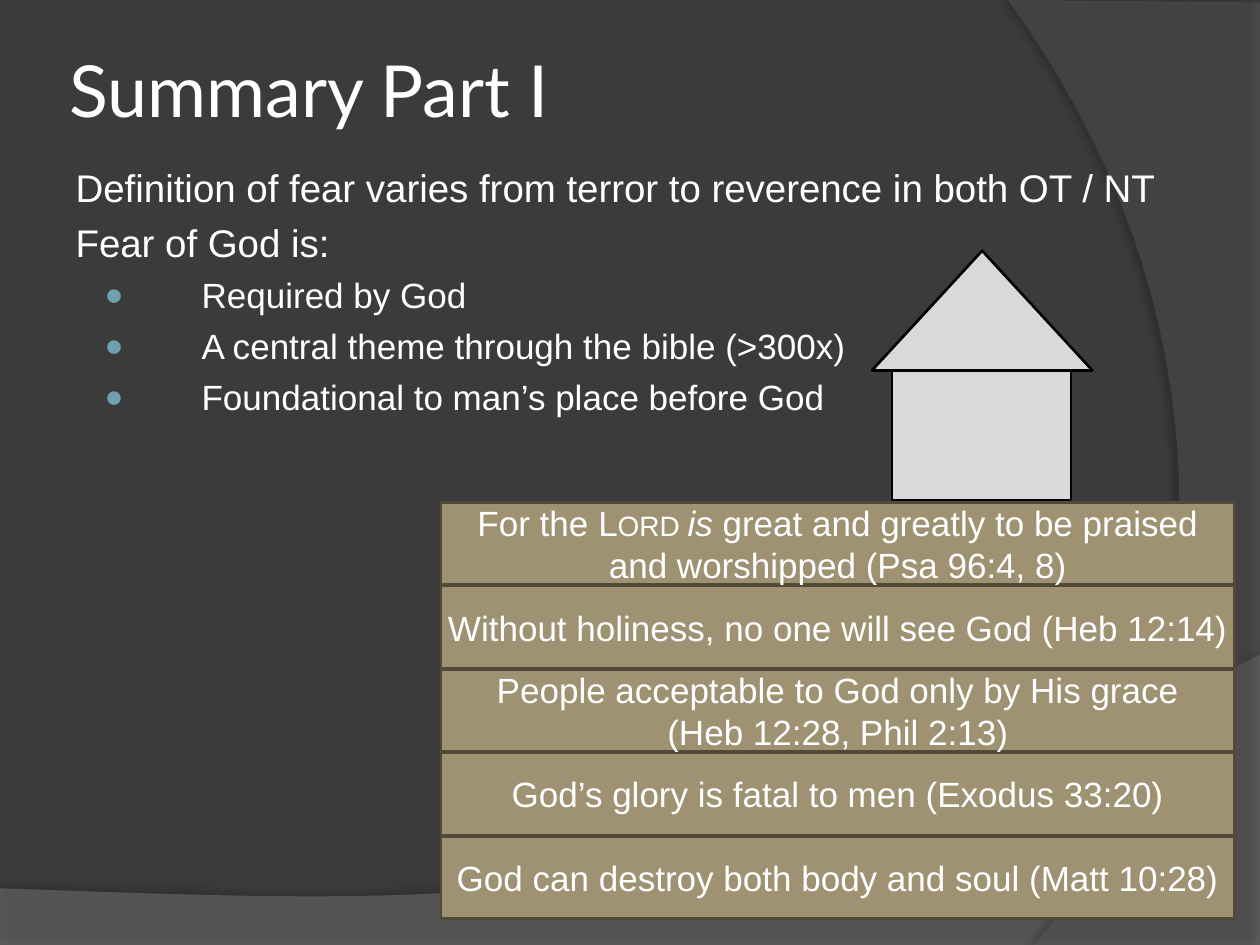
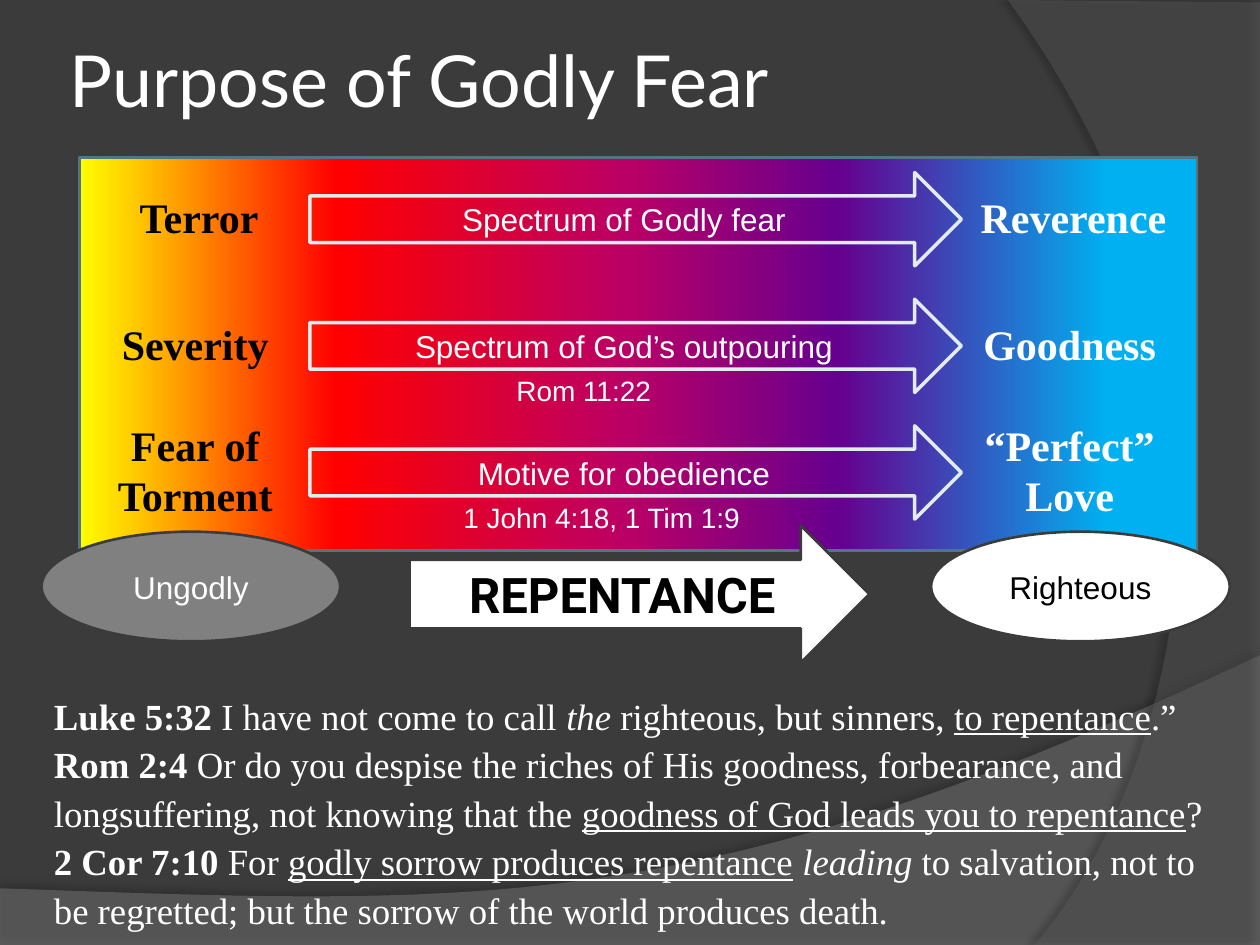
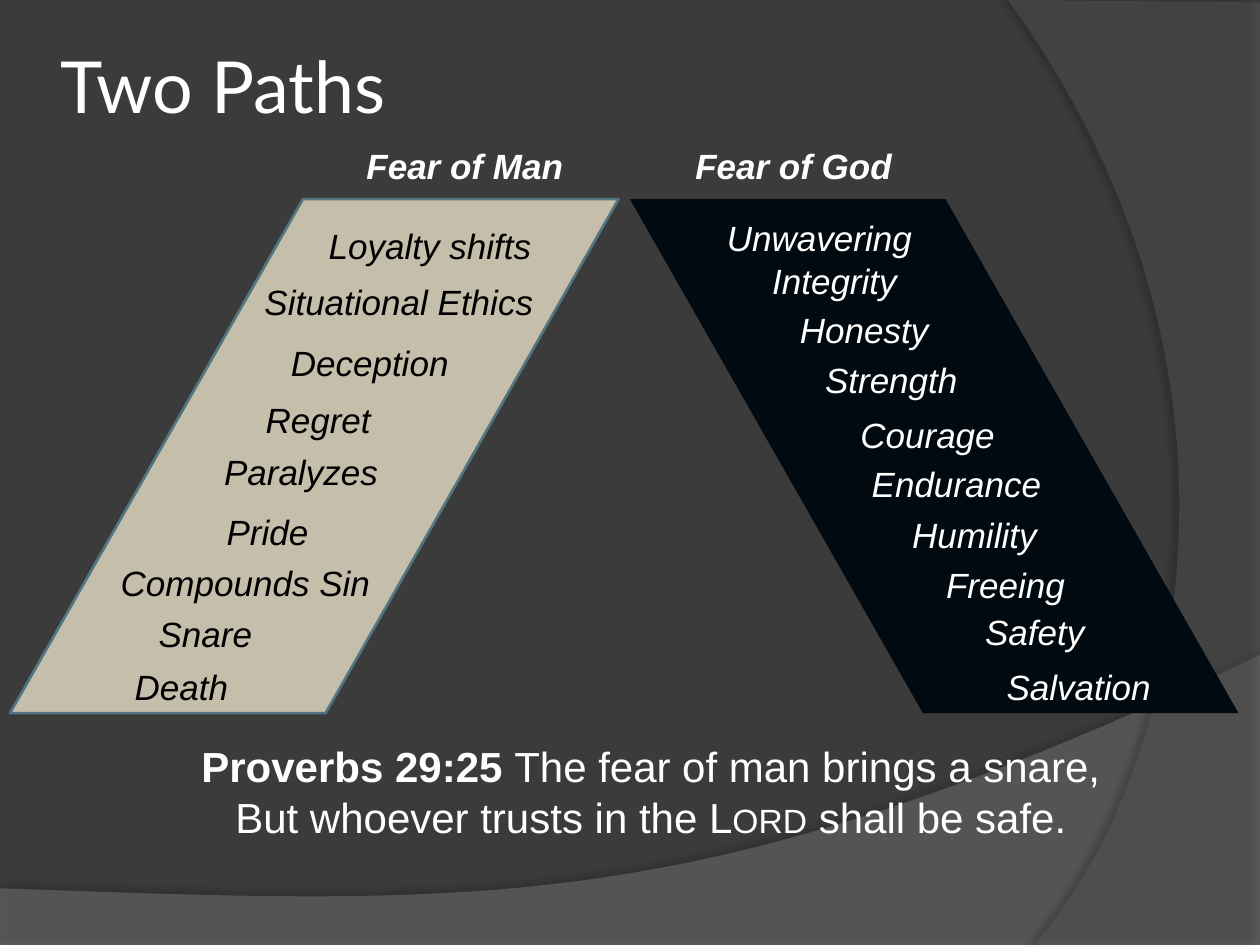
from dataclasses import dataclass
from typing import NamedTuple, Sequence

import lxml.etree
import pptx
import pptx.dml.color
import pptx.dml.fill
import pptx.enum.shapes
import pptx.enum.text
import pptx.oxml.ns
import pptx.presentation
import pptx.shapes.autoshape
import pptx.slide
import pptx.text.text
import pptx.util

CELL = pptx.util.Inches(0.1)  # the slide is a grid of 100 columns and 75 rows
COLUMNS, ROWS = 100, 75

BACKGROUND, WHITE, BLACK = "3B3B3B", "FFFFFF", "000000"
STONE, STONE_EDGE = "9E9273", "514A38"
HOUSE = "D9D9D9"
TEAL_EDGE, BULLET = "517682", "6EA0B0"
ARROW_EDGE = "E2ECEF"
UNGODLY = "808080"
MAN_PATH, GOD_PATH = "C5BEAB", "000A10"
SPECTRUM = ((0, "FFFF00"), (23, "FF0000"), (49, "BA0066"), (68, "66008F"), (92, "00B0F0"))

SHAPE = pptx.enum.shapes.MSO_SHAPE
LEFT, CENTER = pptx.enum.text.PP_ALIGN.LEFT, pptx.enum.text.PP_ALIGN.CENTER
TOP, MIDDLE = pptx.enum.text.MSO_ANCHOR.TOP, pptx.enum.text.MSO_ANCHOR.MIDDLE


class Box(NamedTuple):
    """A place on the grid, in columns and rows."""
    left: float
    top: float
    width: float
    height: float

    def emu(self) -> list[int]:
        return [cells(length) for length in self]


class Span(NamedTuple):
    text: str
    bold: bool = False
    italic: bool = False
    underline: bool = False
    small_caps: bool = False


@dataclass(frozen=True)
class Style:
    size: float
    color: str = WHITE
    font: str = "Arial"
    bold: bool = False
    italic: bool = False
    align: pptx.enum.text.PP_ALIGN = CENTER
    anchor: pptx.enum.text.MSO_ANCHOR = MIDDLE
    line_spacing: float = 1.0
    inset: tuple[float, float] = (1, 0.5)
    wrap: bool = True


class Band(NamedTuple):
    """A curved background area: straight corners, then one Bézier curve."""
    corners: Sequence[tuple[float, float]]
    curve: Sequence[tuple[float, float]]
    color: str
    opacity: int
    shadow_opacity: int
    shadow_distance: float
    shadow_angle: int


class SpectrumRow(NamedTuple):
    severe: str
    mild: str
    meaning: str
    label_left: float
    reference: str = ""
    reference_left: float = 0
    reference_width: float = 0


class Step(NamedTuple):
    text: str
    left: float
    top: float
    width: float


Paragraph = str | Sequence[Span]

BANDS = (
    Band(((0, 75), (100, 75), (100, 52)), ((55.9, 72.9), (39.1, 71.9), (0, 70.5)),
         "7F7F7F", 45, 35, 3.5, 270),
    Band(((100, 0.2), (100, 75), (82.1, 75)), ((93.5, 61.9), (101.8, 30), (80, 0)),
         "5E5E5E", 40, 45, 4, 180),
)

TITLE = Style(41, font="Lato", align=LEFT, inset=(0.5, 0.5))
BLOCK = Style(20, inset=(0.2, 0))
CAPTION = Style(18)
REFERENCE = Style(16, align=LEFT, anchor=TOP, wrap=False)
SCRIPTURE = Style(21, font="Times New Roman", align=LEFT, anchor=TOP, line_spacing=1.1)

FOUNDATION: Sequence[Sequence[Paragraph]] = (
    ((Span("For the "), Span("Lord ", small_caps=True), Span("is", italic=True),
      Span(" great and greatly to be praised and worshipped (Psa 96:4, 8)")),),
    ("Without holiness, no one will see God (Heb 12:14)",),
    ("People acceptable to God only by His grace", "(Heb 12:28, Phil 2:13)"),
    ("God’s glory is fatal to men (Exodus 33:20)",),
    ("God can destroy both body and soul (Matt 10:28)",),
)

SPECTRUM_ROWS = (
    SpectrumRow("Terror", "Reverence", "Spectrum of Godly fear", 4.5),
    SpectrumRow("Severity", "Goodness", "Spectrum of God’s outpouring", 4.2,
                "Rom 11:22", 40, 12.8),
    SpectrumRow("Fear of Torment", "“Perfect” Love", "Motive for obedience", 4.2,
                "1 John 4:18, 1 Tim 1:9", 35.8, 24.2),
)

VERSES = (
    (Span("Luke 5:32 ", bold=True), Span("I have not come to call "), Span("the", italic=True),
     Span(" righteous, but sinners, "), Span("to repentance", underline=True), Span(".”")),
    (Span("Rom 2:4 ", bold=True),
     Span("Or do you despise the riches of His goodness, forbearance, and longsuffering, "
          "not knowing that the "),
     Span("goodness of God leads you to repentance", underline=True), Span("?")),
    (Span("2 Cor 7:10 ", bold=True), Span("For "),
     Span("godly sorrow produces repentance", underline=True), Span(" "),
     Span("leading", italic=True),
     Span(" to salvation, not to be regretted; but the sorrow of the world produces death.")),
)

FEAR_OF_MAN = (
    Step("Loyalty shifts", 25.1, 17.3, 18.2), Step("Situational Ethics", 20, 21.8, 23.5),
    Step("Deception", 22.1, 26.6, 14.7), Step("Regret", 20.1, 31.1, 10.4),
    Step("Paralyzes", 16.8, 35.3, 14.3), Step("Pride", 17, 40, 8.6),
    Step("Compounds Sin", 8.6, 44.1, 22), Step("Snare", 11.6, 48.1, 9.5),
    Step("Death", 9.7, 52.3, 9.5),
)
FEAR_OF_GOD = (
    Step("Unwavering", 56.7, 16.7, 17.5), Step("Integrity", 60.3, 20.1, 12),
    Step("Honesty", 62.5, 24, 12.3), Step("Strength", 64.5, 28, 12.6),
    Step("Courage", 67.3, 32.3, 12.8), Step("Endurance", 68.2, 36.2, 15.6),
    Step("Humility", 71.4, 40.3, 12), Step("Freeing", 74.1, 44.2, 11.5),
    Step("Safety", 77.2, 48, 10), Step("Salvation", 78.9, 52.3, 13.6),
)


def cells(count: float) -> int:
    return round(count * CELL)


def rgb(color: str) -> pptx.dml.color.RGBColor:
    return pptx.dml.color.RGBColor.from_string(color)


def add_xml(parent: lxml.etree._Element, tag: str, **attributes: object) -> lxml.etree._Element:
    child = lxml.etree.SubElement(parent, pptx.oxml.ns.qn(tag))
    for name, value in attributes.items():
        child.set(name, str(value))
    return child


def paint(fill: pptx.dml.fill.FillFormat, color: str | None) -> None:
    if color is None:
        fill.background()
    else:
        fill.solid()
        fill.fore_color.rgb = rgb(color)


def write(frame: pptx.text.text.TextFrame, paragraphs: Sequence[Paragraph], style: Style) -> None:
    frame.auto_size = pptx.enum.text.MSO_AUTO_SIZE.NONE
    frame.word_wrap = style.wrap
    frame.vertical_anchor = style.anchor
    frame.margin_left = frame.margin_right = cells(style.inset[0])
    frame.margin_top = frame.margin_bottom = cells(style.inset[1])
    for index, content in enumerate(paragraphs):
        paragraph = frame.add_paragraph() if index else frame.paragraphs[0]
        paragraph.alignment = style.align
        paragraph.line_spacing = style.line_spacing
        font = paragraph.font
        font.name, font.size = style.font, pptx.util.Pt(style.size)
        font.bold, font.italic = style.bold, style.italic
        font.color.rgb = rgb(style.color)
        for span in (Span(content),) if isinstance(content, str) else content:
            run = paragraph.add_run()
            run.text = span.text
            run.font.bold = span.bold or None
            run.font.italic = span.italic or None
            run.font.underline = span.underline or None
            if span.small_caps:
                run._r.get_or_add_rPr().set("cap", "small")


def add_text(slide: pptx.slide.Slide, box: Box, paragraphs: Sequence[Paragraph],
             style: Style) -> None:
    write(slide.shapes.add_textbox(*box.emu()).text_frame, paragraphs, style)


def add_figure(slide: pptx.slide.Slide, kind: pptx.enum.shapes.MSO_SHAPE, box: Box,
               fill: str | None, edge: str | None, edge_width: float = 1.5,
               paragraphs: Sequence[Paragraph] = (),
               style: Style = CAPTION) -> pptx.shapes.autoshape.Shape:
    figure = slide.shapes.add_shape(kind, *box.emu())
    figure.shadow.inherit = False
    paint(figure.fill, fill)
    paint(figure.line.fill, edge)
    if edge:
        figure.line.width = pptx.util.Pt(edge_width)
    if paragraphs:
        write(figure.text_frame, paragraphs, style)
    return figure


def add_slide(deck: pptx.presentation.Presentation, layout: int, title: str,
              title_box: Box) -> pptx.slide.Slide:
    slide = deck.slides.add_slide(deck.slide_layouts[layout])
    heading = slide.shapes.title
    heading.left, heading.top, heading.width, heading.height = title_box.emu()
    write(heading.text_frame, (title,), TITLE)
    return slide


def curve_points(points: Sequence[tuple[float, float]],
                 steps: int = 40) -> list[tuple[float, float]]:
    """Points along the cubic Bézier curve with the four given control points."""
    result = []
    for step in range(1, steps + 1):
        t = step / steps
        weights = ((1 - t) ** 3, 3 * t * (1 - t) ** 2, 3 * t * t * (1 - t), t ** 3)
        result.append((sum(w * x for w, (x, _) in zip(weights, points)),
                       sum(w * y for w, (_, y) in zip(weights, points))))
    return result


def add_band(deck: pptx.presentation.Presentation, slide: pptx.slide.Slide, band: Band,
             depth: int) -> None:
    """Draw a band and move it to the master, behind its placeholders."""
    outline = [*band.corners, *curve_points((band.corners[-1], *band.curve))]
    start, *others = [(cells(x), cells(y)) for x, y in outline]
    builder = slide.shapes.build_freeform(*start)
    builder.add_line_segments(others, close=True)
    shape = builder.convert_to_shape()
    paint(shape.fill, band.color)
    paint(shape.line.fill, None)
    properties = shape.element.spPr
    add_xml(next(properties.iter(pptx.oxml.ns.qn("a:srgbClr"))), "a:alpha",
            val=band.opacity * 1000)
    shadow = add_xml(add_xml(properties, "a:effectLst"), "a:outerShdw",
                     blurRad=pptx.util.Pt(4), dist=pptx.util.Pt(band.shadow_distance),
                     dir=band.shadow_angle * 60000, algn="ctr", rotWithShape=0)
    add_xml(add_xml(shadow, "a:srgbClr", val=BLACK), "a:alpha", val=band.shadow_opacity * 1000)
    deck.slide_master.shapes.element.insert(2 + depth, shape.element)


def fill_with_spectrum(figure: pptx.shapes.autoshape.Shape) -> None:
    figure.fill.gradient()
    figure.fill.gradient_angle = 0
    stops = next(figure.element.iter(pptx.oxml.ns.qn("a:gsLst")))
    for stop in list(stops):
        stops.remove(stop)
    for position, color in SPECTRUM:
        add_xml(add_xml(stops, "a:gs", pos=position * 1000), "a:srgbClr", val=color)


def indent_points(paragraph: pptx.text.text._Paragraph) -> None:
    """Give a point of the summary its bullet and hanging indent."""
    paragraph.level = 1
    paragraph.font.size = pptx.util.Pt(20)
    properties = paragraph._p.get_or_add_pPr()
    properties.set("marL", str(cells(10)))
    properties.set("indent", str(cells(-7.7)))
    defaults = properties.find(pptx.oxml.ns.qn("a:defRPr"))
    properties.remove(defaults)
    add_xml(add_xml(properties, "a:buClr"), "a:srgbClr", val=BULLET)
    add_xml(properties, "a:buSzPct", val=90000)
    add_xml(properties, "a:buFont", typeface="Arial")
    add_xml(properties, "a:buChar", char="●")
    properties.append(defaults)


def draw_summary(deck: pptx.presentation.Presentation) -> pptx.slide.Slide:
    slide = add_slide(deck, 1, "Summary Part I", Box(5, 0.8, 81.7, 12.5))
    summary = slide.placeholders[1]
    summary.left, summary.top, summary.width, summary.height = Box(5, 12.5, 91.7, 55.8).emu()
    write(summary.text_frame,
          ("Definition of fear varies from terror to reverence in both OT / NT",
           "Fear of God is:", "Required by God", "A central theme through the bible (>300x)",
           "Foundational to man’s place before God"),
          Style(22, align=LEFT, anchor=TOP))
    for index, paragraph in enumerate(summary.text_frame.paragraphs):
        paragraph.space_before = pptx.util.Pt(5)
        if index >= 2:
            indent_points(paragraph)
        else:
            properties = paragraph._p.get_or_add_pPr()
            properties.set("marL", str(cells(4)))
            properties.set("indent", str(cells(-4)))
            properties.insert_element_before(
                properties.makeelement(pptx.oxml.ns.qn("a:buNone")), "a:tabLst", "a:defRPr")

    add_figure(slide, SHAPE.RECTANGLE, Box(70.8, 29.4, 14.2, 10.3), HOUSE, BLACK)
    add_figure(slide, SHAPE.ISOSCELES_TRIANGLE, Box(69.2, 19.9, 17.5, 9.5), HOUSE, BLACK)
    for row, truth in enumerate(FOUNDATION):
        add_figure(slide, SHAPE.RECTANGLE, Box(35, 39.9 + 6.62 * row, 63, 6.5),
                   STONE, STONE_EDGE, paragraphs=truth, style=BLOCK)
    return slide


def draw_purpose(deck: pptx.presentation.Presentation) -> None:
    slide = add_slide(deck, 5, "Purpose of Godly Fear", Box(5, 0, 81.7, 12.5))
    panel = add_figure(slide, SHAPE.RECTANGLE, Box(6.3, 12.5, 88.7, 31.2), None, TEAL_EDGE)
    fill_with_spectrum(panel)
    for index, row in enumerate(SPECTRUM_ROWS):
        top = 13.7 + 10.05 * index
        for label, left, color in ((row.severe, row.label_left, BLACK),
                                   (row.mild, row.label_left + 69.4, WHITE)):
            add_text(slide, Box(left, top - 0.2, 22.6, 7.4), (label,),
                     Style(24, color, "Times New Roman", bold=True))
        add_figure(slide, SHAPE.RIGHT_ARROW, Box(24.6, top, 51.7, 7.4), None, ARROW_EDGE, 2,
                   (row.meaning,))
        if row.reference:
            add_text(slide, Box(row.reference_left, top + 5.4, row.reference_width, 3.7),
                     (row.reference,), REFERENCE)

    for person, left, fill, color in (("Ungodly", 3.3, UNGODLY, WHITE),
                                      ("Righteous", 73.9, WHITE, BLACK)):
        add_figure(slide, SHAPE.OVAL, Box(left, 42.2, 23.7, 8.7), fill, BACKGROUND,
                   paragraphs=(person,), style=Style(18, color))
    add_text(slide, Box(3.3, 54.2, 94.7, 20.2), VERSES, SCRIPTURE)
    add_figure(slide, SHAPE.RIGHT_ARROW, Box(32.5, 41.7, 36.5, 10.9), WHITE, BACKGROUND,
               paragraphs=("REPENTANCE",), style=Style(28, BLACK, "Roboto", bold=True))


def draw_paths(deck: pptx.presentation.Presentation) -> None:
    slide = add_slide(deck, 5, "Two Paths", Box(4.3, 2.5, 81.7, 8.5))
    man_path = add_figure(slide, SHAPE.PARALLELOGRAM, Box(0.8, 15.8, 48.3, 40.8),
                          MAN_PATH, TEAL_EDGE)
    god_path = add_figure(slide, SHAPE.PARALLELOGRAM, Box(50, 15.8, 48.3, 40.8), GOD_PATH, None)
    god_path.element.spPr.xfrm.set("flipH", "1")
    for path_shape in (man_path, god_path):
        path_shape.adjustments[0] = 0.57

    for heading, left, steps, color in (("Fear of Man", 28.1, FEAR_OF_MAN, BLACK),
                                        ("Fear of God", 54.2, FEAR_OF_GOD, WHITE)):
        add_text(slide, Box(left, 11, 17.7, 4.4), (heading,),
                 Style(20, bold=True, italic=True, align=LEFT, anchor=TOP, wrap=False))
        for step in steps:
            add_text(slide, Box(step.left, step.top, step.width, 4.4), (step.text,),
                     Style(20, color, italic=True, align=LEFT, anchor=TOP, wrap=False))

    proverb = (Span("Proverbs 29:25 ", bold=True),
               Span("The fear of man brings a snare, But whoever trusts in the "),
               Span("Lord", small_caps=True), Span(" shall be safe."))
    add_text(slide, Box(14.2, 58.3, 74.9, 13.1), (proverb,), Style(24, anchor=TOP))


def main() -> None:
    deck = pptx.Presentation()
    deck.slide_width, deck.slide_height = cells(COLUMNS), cells(ROWS)
    paint(deck.slide_master.background.fill, BACKGROUND)
    summary = draw_summary(deck)
    for depth, band in enumerate(BANDS):
        add_band(deck, summary, band, depth)
    draw_purpose(deck)
    draw_paths(deck)
    deck.save("out.pptx")


if __name__ == "__main__":
    main()
